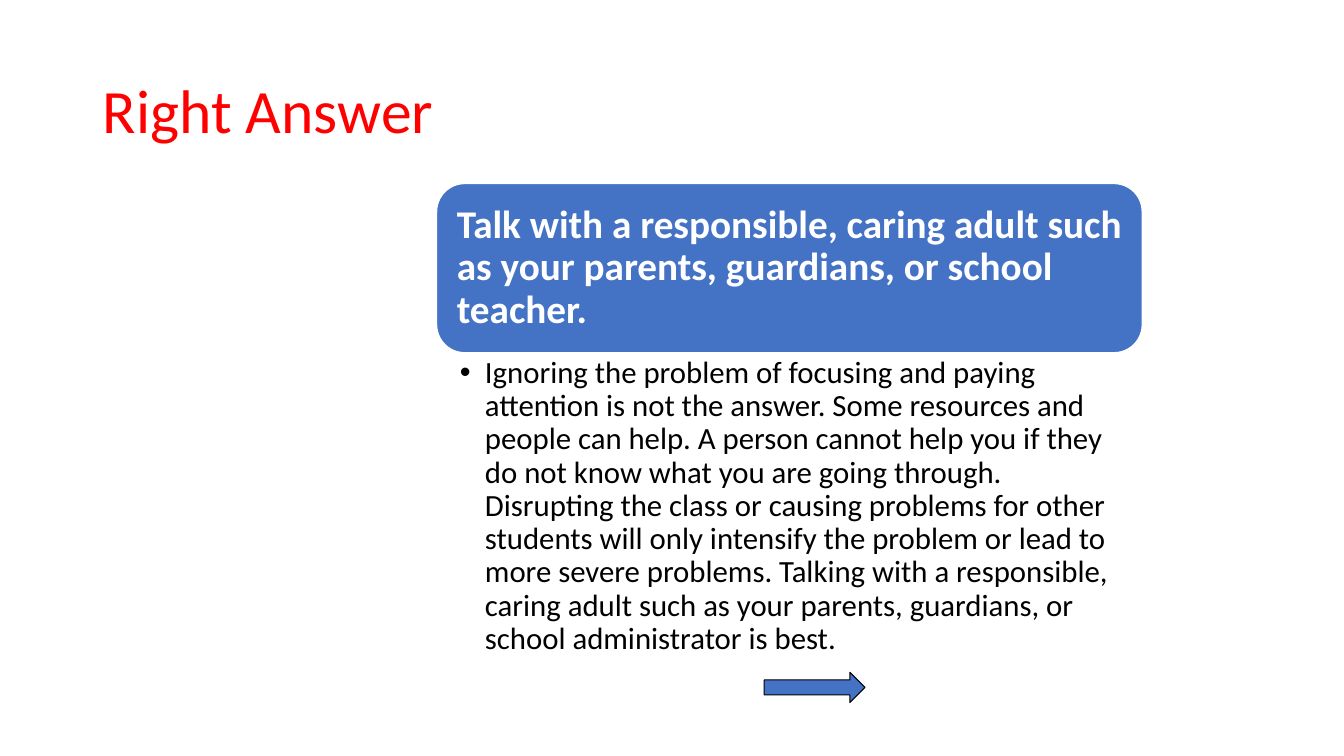
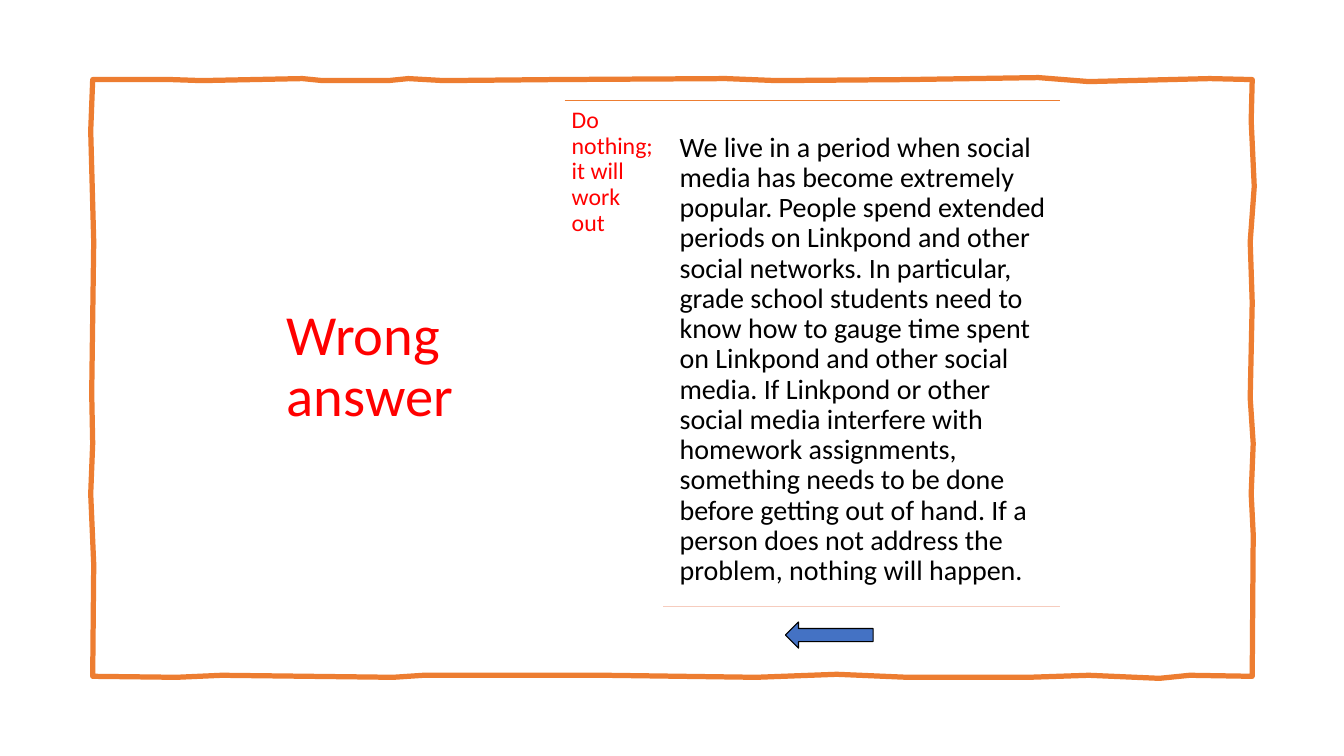
from pptx import Presentation
from pptx.dml.color import RGBColor
from pptx.enum.shapes import MSO_CONNECTOR, MSO_SHAPE
from pptx.enum.text import MSO_ANCHOR, MSO_AUTO_SIZE, PP_ALIGN
from pptx.oxml.ns import qn
from pptx.util import Inches, Pt
from lxml import etree

ARROW, ROUNDED = MSO_SHAPE.RIGHT_ARROW, MSO_SHAPE.ROUNDED_RECTANGLE
STRAIGHT = MSO_CONNECTOR.STRAIGHT
TOP, MIDDLE = MSO_ANCHOR.TOP, MSO_ANCHOR.MIDDLE
TITLE_AND_CONTENT = 1

FONT = "Calibri"
COLORS = {
    "red": "FF0000",
    "blue": "4472C4",
    "orange": "ED7D31",
    "pale_orange": "F6CCBE",
    "black": "000000",
    "white": "FFFFFF",
}

# Hand-drawn frame: edges, and the wobble along each side as (position, offset)
LEFT, UPPER, RIGHT, LOWER = 0.92, 0.79, 12.42, 6.71
BASELINES = {"top": UPPER, "right": RIGHT, "bottom": LOWER, "left": LEFT}
WOBBLE = {
    "top": [(LEFT, 0), (1.7, 0), (2, 0.01), (3, -0.01), (3.2, 0.01),
            (3.85, 0.01), (4.05, -0.01), (4.4, 0.01), (5.5, 0), (7.2, -0.01),
            (7.7, 0.01), (9, 0), (10.3, -0.02), (10.8, 0.02), (12, -0.01)],
    "right": [(UPPER, 0), (1.2, -0.01), (1.85, 0.02), (2.4, -0.02), (3, 0),
              (3.95, -0.02), (4.4, 0.01), (4.9, -0.01), (5.3, 0.01)],
    "bottom": [(RIGHT, 0), (11.8, -0.01), (11.5, 0.02), (10.8, -0.01),
               (10.2, 0.01), (9, 0.01), (8.3, -0.02), (7.5, 0.01), (6, -0.01),
               (4.2, -0.01), (3.9, 0.01), (2.2, -0.01), (1.75, 0.01)],
    "left": [(LOWER, 0), (5.6, 0.01), (4.9, -0.02), (4.4, 0), (3.9, -0.01),
             (2.4, 0.01), (1.3, -0.02)],
}

SOLUTION = (
    "Talk with a responsible, caring adult such as your parents, guardians, "
    "or school teacher."
)
SOLUTION_REASON = (
    "Ignoring the problem of focusing and paying attention is not the answer. "
    "Some resources and people can help. A person cannot help you if they do not "
    "know what you are going through. Disrupting the class or causing problems for "
    "other students will only intensify the problem or lead to more severe "
    "problems. Talking with a responsible, caring adult such as your parents, "
    "guardians, or school administrator is best."
)
MISTAKE = "Do nothing; it will work out"
MISTAKE_REASON = (
    "We live in a period when social media has become extremely popular. People "
    "spend extended periods on Linkpond and other social networks. In particular, "
    "grade school students need to know how to gauge time spent on Linkpond and "
    "other social media. If Linkpond or other social media interfere with homework "
    "assignments, something needs to be done before getting out of hand. If a "
    "person does not address the problem, nothing will happen."
)


def rgb(name):
    return RGBColor.from_string(COLORS[name])


def place(shape, left, top, width, height):
    box = {"left": left, "top": top, "width": width, "height": height}
    for side, inches in box.items():
        setattr(shape, side, Inches(inches))


def set_outline(shape, color, width):
    shape.line.color.rgb = rgb(color)
    shape.line.width = Pt(width)


def write(shape, text, size, color, bold=False, anchor=TOP, insets=(0.1, 0.05)):
    """Put one left-aligned paragraph into a shape and return it."""
    frame = shape.text_frame
    across, down = (Inches(inset) for inset in insets)
    paragraph = frame.paragraphs[0]
    run = paragraph.add_run()
    run.text = text
    formats = (
        (frame, {"word_wrap": True, "auto_size": MSO_AUTO_SIZE.NONE,
                 "vertical_anchor": anchor, "margin_left": across,
                 "margin_right": across, "margin_top": down,
                 "margin_bottom": down}),
        (paragraph, {"alignment": PP_ALIGN.LEFT, "line_spacing": 0.9,
                     "space_before": Pt(0)}),
        (run.font, {"name": FONT, "size": Pt(size), "bold": bold}),
    )
    for target, values in formats:
        for attribute, value in values.items():
            setattr(target, attribute, value)
    run.font.color.rgb = rgb(color)
    return paragraph


def set_bullet(paragraph, hanging=0, symbol=None):
    properties = paragraph._p.get_or_add_pPr()
    properties.set("marL", str(Inches(hanging)))
    properties.set("indent", str(-Inches(hanging)))
    if symbol:
        etree.SubElement(properties, qn("a:buFont"), typeface="Arial")
        etree.SubElement(properties, qn("a:buChar"), char=symbol)
    else:
        etree.SubElement(properties, qn("a:buNone"))


def add_title(slide, text, box, size=44):
    title = slide.shapes.title
    place(title, *box)
    write(title, text, size, "red", anchor=MIDDLE)


def add_reason(slide, text, box, size, insets, **bullet):
    body = slide.placeholders[1]
    place(body, *box)
    set_bullet(write(body, text, size, "black", insets=insets), **bullet)


def add_shape(slide, kind, box, outline, width):
    shape = slide.shapes.add_shape(kind, *map(Inches, box))
    shape.shadow.inherit = False
    shape.fill.solid()
    shape.fill.fore_color.rgb = rgb("blue")
    set_outline(shape, outline, width)
    return shape


def add_arrow(slide, box, rotation=0):
    add_shape(slide, ARROW, box, "black", 0.75).rotation = rotation


def add_rule(slide, left, right, y, color):
    rule = slide.shapes.add_connector(STRAIGHT, *map(Inches, (left, y, right, y)))
    set_outline(rule, color, 1)
    etree.SubElement(rule._element.spPr, qn("a:effectLst"))


def add_sketched_frame(slide):
    outline = []
    for side, knots in WOBBLE.items():
        for along, offset in knots:
            across = BASELINES[side] + offset
            point = (along, across) if side in ("top", "bottom") else (across, along)
            outline.append(tuple(map(Inches, point)))
    builder = slide.shapes.build_freeform(*outline[0])
    builder.add_line_segments(outline[1:], close=True)
    frame = builder.convert_to_shape()
    frame.shadow.inherit = False
    frame.fill.background()
    set_outline(frame, "orange", 3.75)


def build_right_answer(slide):
    add_title(slide, "Right Answer", (0.92, 0.4, 11.5, 1.45))
    add_arrow(slide, (7.58, 6.67, 1, 0.3))
    # Solution banner and its explanation
    banner = add_shape(slide, ROUNDED, (4.33, 1.82, 7, 1.68), "white", 1)
    write(banner, SOLUTION, 28, "white", bold=True, anchor=MIDDLE,
          insets=(0.12, 0.12))
    add_reason(slide, SOLUTION_REASON, (4.34, 3.5, 7, 3.11), 22, (0.22, 0.04),
               hanging=0.25, symbol="•")


def build_wrong_answer(slide):
    add_sketched_frame(slide)
    add_title(slide, "Wrong answer", (2.74, 1, 2.44, 5.3), size=40.4)
    add_arrow(slide, (7.79, 6.17, 0.87, 0.26), rotation=180)
    # Mistake and its explanation between two rules
    add_rule(slide, 5.6, 10.51, 1, "orange")
    mistake = slide.shapes.add_textbox(*map(Inches, (5.6, 1, 0.98, 5.26)))
    write(mistake, MISTAKE, 17, "red", insets=(0.07, 0.07))
    add_reason(slide, MISTAKE_REASON, (6.66, 1.24, 3.86, 4.78), 20, (0.08, 0.08))
    add_rule(slide, 6.58, 10.51, 6.02, "pale_orange")


def main():
    deck = Presentation()
    deck.slide_width, deck.slide_height = Inches(13.33), Inches(7.5)
    for build in (build_right_answer, build_wrong_answer):
        build(deck.slides.add_slide(deck.slide_layouts[TITLE_AND_CONTENT]))
    deck.save("out.pptx")


if __name__ == "__main__":
    main()
